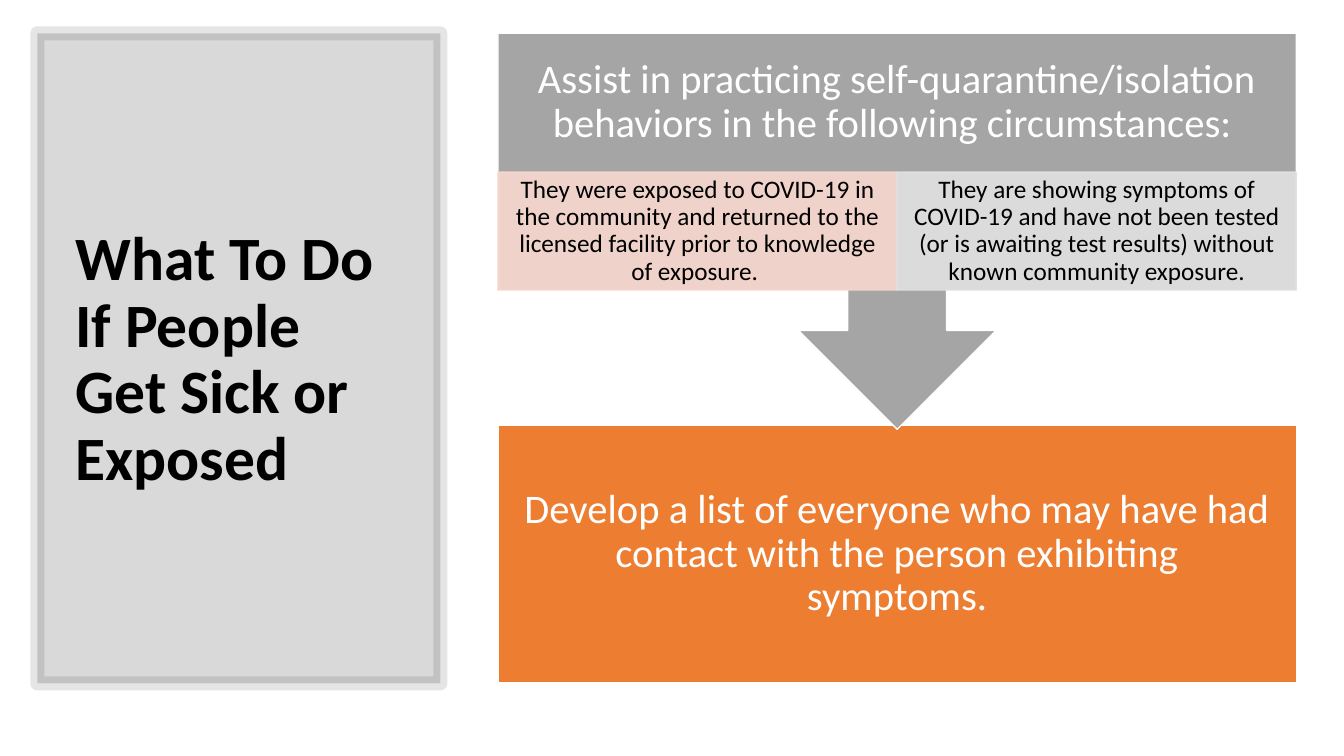
import pptx
import pptx.util
import pptx.dml.color
import pptx.enum.shapes
import pptx.enum.text
import pptx.oxml
import pptx.oxml.ns
from dataclasses import dataclass

Cm = pptx.util.Cm
Kind = pptx.enum.shapes.MSO_SHAPE
Align = pptx.enum.text.PP_ALIGN


@dataclass(frozen=True)
class Theme:
    font: str = "Calibri"
    black: str = "000000"
    white: str = "FFFFFF"
    gray: str = "A5A5A5"
    orange: str = "ED7D31"
    pink: str = "F8D7CE"
    pale: str = "E1E1E1"
    title: int = 44
    head: int = 29
    body: int = 18


THEME = Theme()

# Flow area on the right: left edge, top and width in cm
LEFT, TOP, WIDE = 12.55, 0.84, 20.12
HEAD, CASE = 3.5, 2.97
WIDE_PAD = (0.58, 0.58)
CASE_PAD = (0.36, 0.08)


def paint(fill, color, alpha=100):
    """Set a solid colour, with opacity in percent."""
    fill.solid()
    fill.fore_color.rgb = pptx.dml.color.RGBColor.from_string(color)
    if alpha < 100:
        tag = fill.fore_color._xFill[0]
        node = pptx.oxml.parse_xml(
            f'<a:alpha {pptx.oxml.ns.nsdecls("a")} val="{alpha * 1000}"/>')
        tag.append(node)


def add_box(slide, box, color, edge, kind=Kind.RECTANGLE, width=1,
            alpha=100, faint=100):
    """Draw a filled preset shape with an outline."""
    shape = slide.shapes.add_shape(kind, *map(Cm, box))
    shape.shadow.inherit = False
    paint(shape.fill, color, alpha)
    shape.line.width = pptx.util.Pt(width)
    paint(shape.line.fill, edge, faint)
    return shape


def put_text(shape, text, size, color, bold=False, align=Align.CENTER,
             pad=(0.25, 0.13)):
    """Write one formatted paragraph, centred in height."""
    frame = shape.text_frame
    frame.word_wrap = True
    frame.vertical_anchor = pptx.enum.text.MSO_ANCHOR.MIDDLE
    frame.margin_left = frame.margin_right = Cm(pad[0])
    frame.margin_top = frame.margin_bottom = Cm(pad[1])
    para = frame.paragraphs[0]
    para.alignment = align
    para.line_spacing = 0.9
    run = para.add_run()
    run.text = text
    run.font.name = THEME.font
    run.font.size = pptx.util.Pt(size)
    run.font.bold = bold
    run.font.color.rgb = pptx.dml.color.RGBColor.from_string(color)


def add_title(slide):
    add_box(slide, (0.94, TOP, 10.16, 16.38), THEME.black, THEME.black,
            width=10, alpha=15, faint=10)
    label = slide.shapes.add_textbox(*map(Cm, (1.65, 1.78, 8.79, 14.6)))
    put_text(label, "What To Do If People Get Sick or Exposed",
             THEME.title, THEME.black, bold=True, align=Align.LEFT)


def add_step(slide):
    step = add_box(slide, (LEFT, 10.72, WIDE, 6.48), THEME.orange, THEME.white)
    put_text(step, "Develop a list of everyone who may have had contact with "
             "the person exhibiting symptoms.",
             THEME.head, THEME.white, pad=WIDE_PAD)


def add_head(slide):
    add_box(slide, (LEFT, TOP, WIDE, 9.98), THEME.gray, THEME.white,
            kind=Kind.DOWN_ARROW_CALLOUT)
    label = slide.shapes.add_textbox(*map(Cm, (LEFT, TOP, WIDE, HEAD)))
    put_text(label, "Assist in practicing self-quarantine/isolation behaviors "
             "in the following circumstances: ",
             THEME.head, THEME.white, pad=WIDE_PAD)


def add_cases(slide):
    cases = [
        (THEME.pink, "They were exposed to COVID-19 in the community and "
         "returned to the licensed facility prior to knowledge of exposure. "),
        (THEME.pale, "They are showing symptoms of COVID-19 and have not been "
         "tested (or is awaiting test results) without known community "
         "exposure."),
    ]
    width = WIDE / len(cases)
    for col, (color, text) in enumerate(cases):
        box = (LEFT + col * width, TOP + HEAD, width, CASE)
        case = add_box(slide, box, color, color, alpha=90, faint=90)
        put_text(case, text, THEME.body, THEME.black, pad=CASE_PAD)


def main():
    deck = pptx.Presentation()
    deck.slide_width, deck.slide_height = Cm(33.87), Cm(19.05)
    slide = deck.slides.add_slide(deck.slide_layouts[6])

    # Title panel
    add_title(slide)

    # Flow, from back to front
    add_step(slide)
    add_head(slide)
    add_cases(slide)

    deck.save("out.pptx")


if __name__ == "__main__":
    main()
